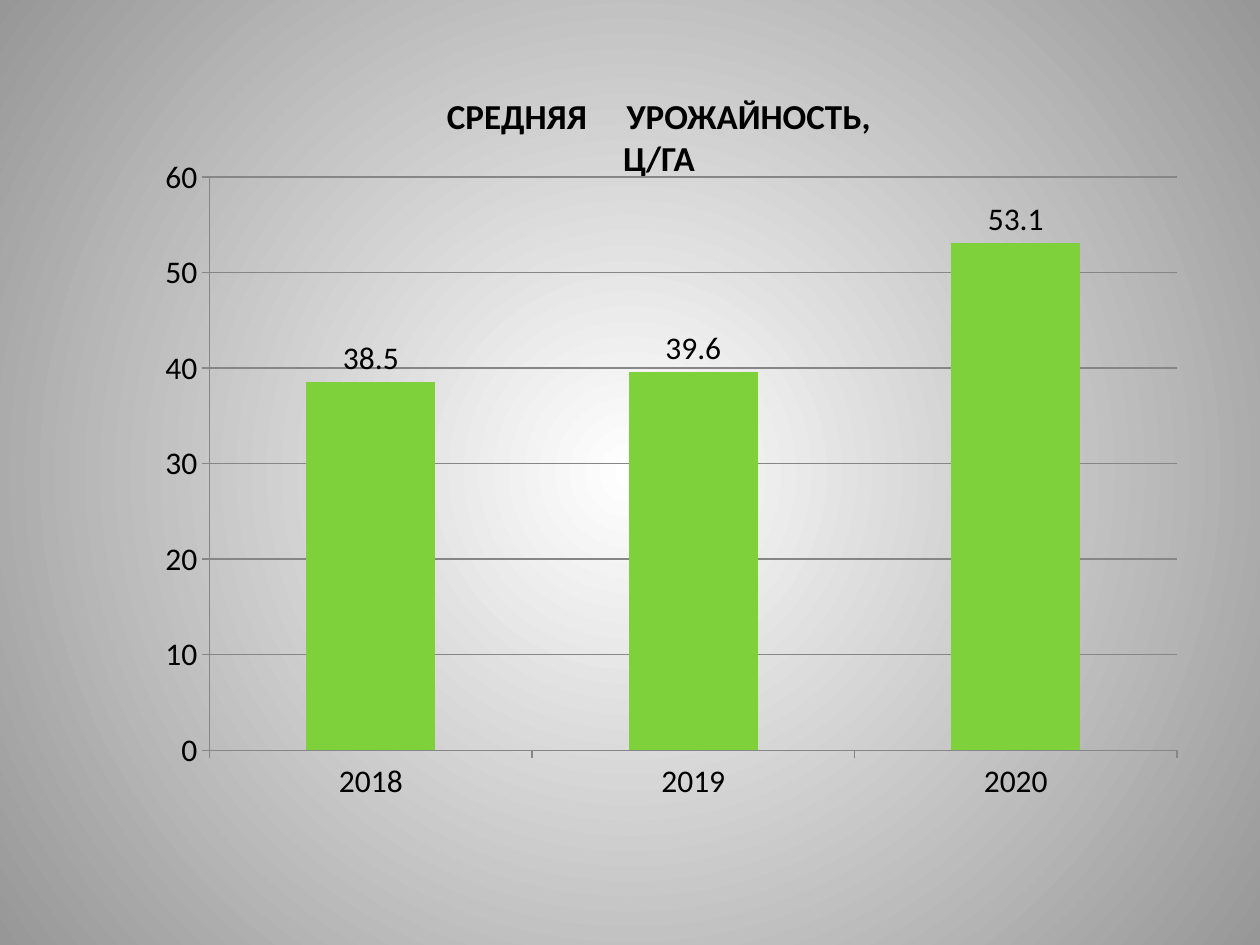
from lxml.etree import SubElement
from pptx import Presentation
from pptx.chart.data import CategoryChartData
from pptx.dml.color import RGBColor
from pptx.enum.chart import XL_CHART_TYPE as ChartType
from pptx.enum.chart import XL_LABEL_POSITION as LabelPosition
from pptx.enum.chart import XL_TICK_MARK as TickMark
from pptx.enum.text import MSO_ANCHOR as Anchor
from pptx.enum.text import PP_ALIGN as Align
from pptx.oxml.ns import qn
from pptx.util import Inches, Pt

WHITE = RGBColor(0xFF, 0xFF, 0xFF)
BLACK = RGBColor(0, 0, 0)
EDGE_GREY = RGBColor(0x97, 0x97, 0x97)
LINE_GREY = RGBColor(0x86, 0x86, 0x86)
GREEN = RGBColor(0x7F, 0xD1, 0x3B)
FONT = "Calibri"

TITLE_LINES = [["СРЕДНЯЯ", " ", "УРОЖАЙНОСТЬ,"], ["Ц/ГА"]]
WORD_GAP = Pt(18)
YIELDS = {"2018": 38.5, "2019": 39.6, "2020": 53.1}
PLOT_AREA = {"x": 0.133, "y": 0.056, "w": 0.855, "h": 0.808}


def style_font(font, size, bold=False):
    font.name, font.size, font.bold = FONT, Pt(size), bold
    font.color.rgb = BLACK


def paint_background(page):
    """Radial gradient, white in the middle and grey at the edges."""
    fill = page.background.fill
    fill.gradient()
    for stop, color in zip(fill.gradient_stops, (WHITE, EDGE_GREY)):
        stop.color.rgb = color
    gradient = page._element.find(".//" + qn("a:gradFill"))
    gradient.remove(gradient.find(qn("a:lin")))
    radial = SubElement(gradient, qn("a:path"), {"path": "circle"})
    SubElement(radial, qn("a:fillToRect"), dict.fromkeys("ltrb", "50000"))


def add_title(page, box):
    title = page.shapes.title
    title.left, title.top, title.width, title.height = box
    frame = title.text_frame
    frame.word_wrap = True
    frame.vertical_anchor = Anchor.TOP
    for index, words in enumerate(TITLE_LINES):
        para = frame.add_paragraph() if index else frame.paragraphs[0]
        para.alignment = Align.CENTER
        for word in words:
            span = para.add_run()
            span.text = word
            style_font(span.font, 20, bold=True)
            # The space between the words is widened by letter spacing
            if word == " ":
                span.font._element.set("spc", str(round(WORD_GAP.pt * 100)))


def place_plot_area(chart):
    """Fix the inner plot area as fractions of the chart."""
    plot_area = chart._chartSpace.find(".//" + qn("c:plotArea"))
    layout = plot_area.find(qn("c:layout"))
    if layout is None:
        layout = SubElement(plot_area, qn("c:layout"))
        plot_area.insert(0, layout)
    manual = SubElement(layout, qn("c:manualLayout"))
    settings = {"layoutTarget": "inner", "xMode": "edge", "yMode": "edge"}
    for tag, value in {**settings, **PLOT_AREA}.items():
        SubElement(manual, qn("c:" + tag), {"val": str(value)})


def add_yield_chart(page, box):
    data = CategoryChartData(number_format="General")
    data.categories = list(YIELDS)
    data.add_series("Series 1", list(YIELDS.values()))
    chart = page.shapes.add_chart(ChartType.COLUMN_CLUSTERED, *box, data).chart
    chart.has_title = False
    chart.has_legend = False
    style_font(chart.font, 18)
    place_plot_area(chart)

    # Axes and gridlines
    value_axis = chart.value_axis
    value_axis.minimum_scale, value_axis.maximum_scale = 0, 60
    value_axis.major_unit = 10
    value_axis.has_major_gridlines = True
    for axis in (chart.category_axis, value_axis):
        axis.major_tick_mark = TickMark.OUTSIDE
        axis.minor_tick_mark = TickMark.NONE
    for part in (chart.category_axis, value_axis, value_axis.major_gridlines):
        part.format.line.color.rgb = LINE_GREY
        part.format.line.width = Pt(0.75)

    # Columns and their values
    plot = chart.plots[0]
    plot.vary_by_categories = False
    plot.gap_width = 150
    column_fill = plot.series[0].format.fill
    column_fill.solid()
    column_fill.fore_color.rgb = GREEN
    labels = plot.series[0].data_labels
    labels.show_value = True
    labels.position = LabelPosition.OUTSIDE_END
    style_font(labels.font, 18)


def main():
    deck = Presentation()
    deck.slide_width, deck.slide_height = Inches(10), Inches(7.5)
    page = deck.slides.add_slide(deck.slide_layouts.get_by_name("Title Only"))
    paint_background(page)
    add_title(page, (Inches(1.56), Inches(0.7), Inches(7.34), Inches(0.77)))
    add_yield_chart(page, (Inches(0.47), Inches(1.09), Inches(8.98), Inches(5.63)))
    deck.save("out.pptx")


if __name__ == "__main__":
    main()
